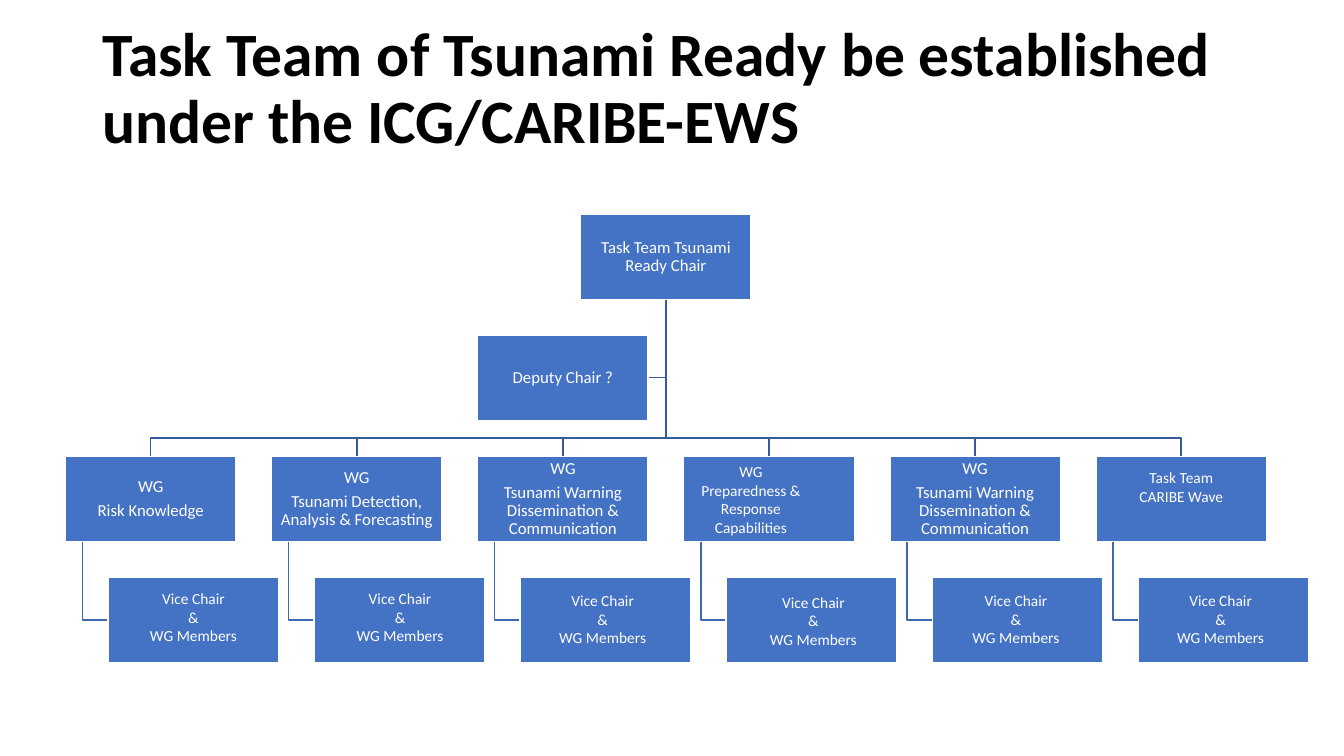
from pptx import Presentation
from pptx.dml.color import RGBColor
from pptx.enum import shapes, text
from pptx.util import Pt

COLORS = {"box": "4472C4", "white": "FFFFFF", "title": "000000",
          "trunk": "365B9D", "branch": "3E67B2"}
BOX_W, BOX_H = 121.8, 60.9
LEFT, COLUMN_STEP = 46.8, 147.2
CHAIR_TOP, DEPUTY_TOP, GROUP_TOP, VICE_TOP = [152.9 + 86.5 * row for row in range(4)]
CHAIR_LEFT = LEFT + 2.5 * COLUMN_STEP
DEPUTY_LEFT = LEFT + 2 * COLUMN_STEP
VICE_INDENT, STEM_INDENT = 30.3, 12.2
BUS_Y = 313

GROUPS = [
    ["WG", "Risk Knowledge"],
    ["WG", "Tsunami Detection, Analysis & Forecasting"],
    ["WG", "Tsunami Warning Dissemination & Communication"],
    [],
    ["WG", "Tsunami Warning Dissemination & Communication"],
    [],
]
VICE_LINES = ["Vice Chair", "&", "WG Members"]
VICE_LABEL_SPOTS = [(90.7, 417.6), (238.3, 417.6), (383, 419),
                    (533.5, 419.8), (678.2, 419), (824.4, 419)]
# left, top, width, height, lines
LABELS = [
    (796.3, 331.2, 95, 33.8, ["Task Team", "CARIBE Wave"]),
    (492.5, 326.9, 87.8, 60.5, ["WG", "Preparedness & Response Capabilities"]),
] + [(x, y, 95, 47.5, VICE_LINES) for x, y in VICE_LABEL_SPOTS]

prs = Presentation()
prs.slide_width, prs.slide_height = Pt(960), Pt(540)
slide = prs.slides.add_slide(prs.slide_layouts[6])


def write(frame, lines, size, color, bold=False, align=text.PP_ALIGN.CENTER,
          line_spacing=1.0, space_after=0):
    frame.word_wrap = True
    for number, line in enumerate(lines):
        paragraph = frame.add_paragraph() if number else frame.paragraphs[0]
        paragraph.text = line
        paragraph.alignment = align
        paragraph.line_spacing = line_spacing
        paragraph.space_after = Pt(space_after)
        paragraph.font.name = "Calibri"
        paragraph.font.size = Pt(size)
        paragraph.font.bold = bold
        paragraph.font.color.rgb = RGBColor.from_string(COLORS[color])


def draw_route(points, color):
    """Draw an open, unfilled line through points given in points."""
    start, *rest = [(Pt(x), Pt(y)) for x, y in points]
    builder = slide.shapes.build_freeform(*start)
    builder.add_line_segments(rest, close=False)
    route = builder.convert_to_shape()
    route.shadow.inherit = False
    route.fill.background()
    route.line.color.rgb = RGBColor.from_string(COLORS[color])
    route.line.width = Pt(1)


# Title
title = slide.shapes.add_textbox(Pt(66), Pt(12), Pt(828), Pt(104.4)).text_frame
title.vertical_anchor = text.MSO_ANCHOR.MIDDLE
write(title, ["Task Team of Tsunami Ready be established under the ICG/CARIBE-EWS"],
      44, "title", bold=True, align=text.PP_ALIGN.LEFT, line_spacing=0.9)

# Lines of the chart, behind the boxes
trunk_x = CHAIR_LEFT + BOX_W / 2
chair_bottom = CHAIR_TOP + BOX_H
deputy_y = DEPUTY_TOP + BOX_H / 2
draw_route([(trunk_x, chair_bottom), (trunk_x, deputy_y),
            (DEPUTY_LEFT + BOX_W, deputy_y)], "trunk")

boxes = [(CHAIR_LEFT, CHAIR_TOP, ["Task Team Tsunami Ready Chair"]),
         (DEPUTY_LEFT, DEPUTY_TOP, ["Deputy Chair ?"])]
for column, group_lines in enumerate(GROUPS):
    left = LEFT + column * COLUMN_STEP
    center = left + BOX_W / 2
    stem_x = left + STEM_INDENT
    vice_y = VICE_TOP + BOX_H / 2
    draw_route([(trunk_x, chair_bottom), (trunk_x, BUS_Y),
                (center, BUS_Y), (center, GROUP_TOP)], "trunk")
    draw_route([(stem_x, GROUP_TOP + BOX_H), (stem_x, vice_y),
                (left + VICE_INDENT, vice_y)], "branch")
    boxes += [(left, GROUP_TOP, group_lines), (left + VICE_INDENT, VICE_TOP, [])]

# Boxes
for left, top, lines in boxes:
    box = slide.shapes.add_shape(shapes.MSO_SHAPE.RECTANGLE,
                                 Pt(left), Pt(top), Pt(BOX_W), Pt(BOX_H))
    box.shadow.inherit = False
    box.fill.solid()
    box.fill.fore_color.rgb = RGBColor.from_string(COLORS["box"])
    box.line.color.rgb = RGBColor.from_string(COLORS["white"])
    box.line.width = Pt(1)
    frame = box.text_frame
    frame.vertical_anchor = text.MSO_ANCHOR.MIDDLE
    frame.margin_left = frame.margin_right = Pt(0.6)
    frame.margin_top = frame.margin_bottom = Pt(0.6)
    write(frame, lines, 12, "white", line_spacing=0.9, space_after=4.2)

# Labels set over the boxes
for left, top, width, height, lines in LABELS:
    label = slide.shapes.add_textbox(Pt(left), Pt(top), Pt(width), Pt(height))
    write(label.text_frame, lines, 11, "white")

prs.save("out.pptx")
